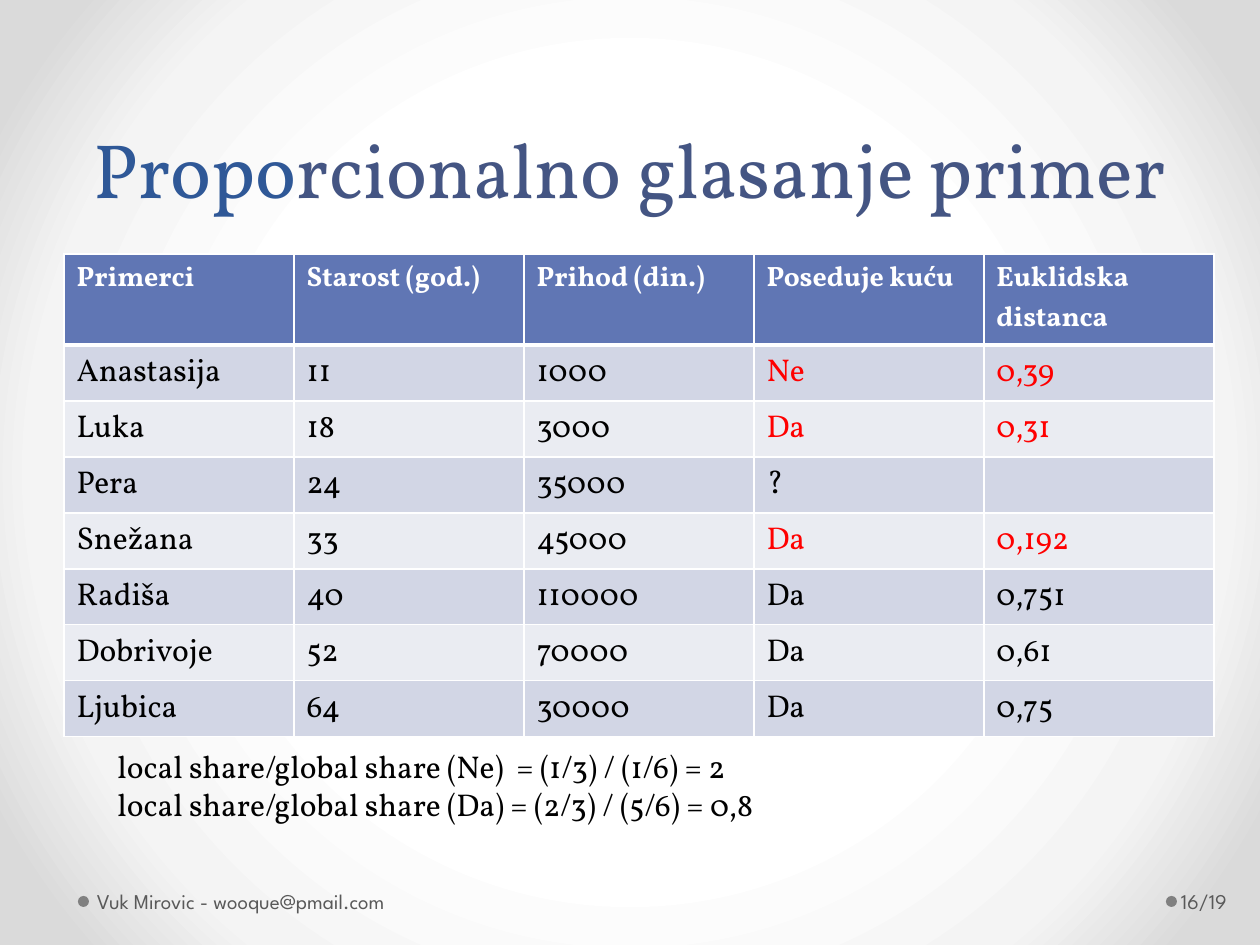
from lxml import etree
from pptx import Presentation
from pptx import util as u
from pptx.dml.color import RGBColor
from pptx.enum import shapes, text
from pptx.oxml import parse_xml
from pptx.oxml.ns import nsdecls, qn

EMU_PER_PX = 914400 / 126
SERIF, SANS = "Vollkorn", "League Spartan"
BLACK, WHITE, RED, GREY = "000000", "FFFFFF", "FF0000", "595959"
HEADER_FILL, BANDS = "6076B4", ("D2D6E5", "EAECF2")

HEADER = ["Primerci", "Starost (god.)", "Prihod (din.)", "Poseduje kuću", "Euklidska distanca"]
PEOPLE = [
    ["Anastasija", "11", "1000", "Ne", "0,39"],
    ["Luka", "18", "3000", "Da", "0,31"],
    ["Pera", "24", "35000", "?", ""],
    ["Snežana", "33", "45000", "Da", "0,192"],
    ["Radiša", "40", "110000", "Da", "0,751"],
    ["Dobrivoje", "52", "70000", "Da", "0,61"],
    ["Ljubica", "64", "30000", "Da", "0,75"],
]
NEIGHBOURS = {"Anastasija", "Luka", "Snežana"}


def px(n):
    return u.Emu(round(n * EMU_PER_PX))


def rgb(value):
    return RGBColor.from_string(value)


class Deck:
    def __init__(self, width, height):
        self.prs = Presentation()
        self.prs.slide_width, self.prs.slide_height = px(width), px(height)
        self.s = self.prs.slides.add_slide(self.prs.slide_layouts[6])

    def radial_background(self, stops):
        fill = self.s.background.fill
        fill.gradient()
        grad = next(self.s.element.iter(qn("a:gradFill")))
        for child in list(grad):
            grad.remove(child)
        stop_list = etree.SubElement(grad, qn("a:gsLst"))
        for percent, color in stops:
            stop = etree.SubElement(stop_list, qn("a:gs"), pos=str(percent * 1000))
            etree.SubElement(stop, qn("a:srgbClr"), val=color)
        circle = etree.SubElement(grad, qn("a:path"), path="circle")
        etree.SubElement(circle, qn("a:fillToRect"), l="50000", t="50000", r="50000", b="50000")

    def run(self, p, words, size, color, font=SERIF, bold=False):
        r = p.add_run()
        r.text = words
        for name, value in {"size": u.Pt(size), "name": font, "bold": bold}.items():
            setattr(r.font, name, value)
        r.font.color.rgb = rgb(color)

    def text(self, box, lines, size, font=SERIF, align=None, spacing=None, **frame):
        """Add a text box; each line is a list of (words, colour) runs."""
        tf = self.s.shapes.add_textbox(*map(px, box)).text_frame
        for name, value in {"word_wrap": True, **frame}.items():
            setattr(tf, name, value)
        for i, line in enumerate(lines):
            p = tf.add_paragraph() if i else tf.paragraphs[0]
            p.alignment, p.line_spacing = align, spacing
            for words, color in line:
                self.run(p, words, size, color, font)

    def dot(self, x, y, size, color):
        sp = self.s.shapes.add_shape(shapes.MSO_SHAPE.OVAL, *map(px, (x, y, size, size)))
        sp.shadow.inherit = False
        sp.fill.solid()
        sp.fill.fore_color.rgb = rgb(color)
        sp.line.fill.background()

    def cell(self, cell, words, fill, borders, **style):
        tc_pr = cell._tc.get_or_add_tcPr()
        for side, points in zip("LRTB", borders):
            tc_pr.append(parse_xml(
                f'<a:ln{side} {nsdecls("a")} w="{u.Pt(points)}"><a:solidFill>'
                f'<a:srgbClr val="{WHITE}"/></a:solidFill></a:ln{side}>'))
        cell.fill.solid()
        cell.fill.fore_color.rgb = rgb(fill)
        if words:
            self.run(cell.text_frame.paragraphs[0], words, **style)

    def table(self, x, y, col_width, header_height, row_height):
        rows, cols = len(PEOPLE) + 1, len(HEADER)
        height = header_height + row_height * len(PEOPLE)
        table = self.s.shapes.add_table(
            rows, cols, *map(px, (x, y, col_width * cols, height))).table
        for column in table.columns:
            column.width = px(col_width)
        for i, row in enumerate(table.rows):
            row.height = px(row_height if i else header_height)
        for c, words in enumerate(HEADER):
            self.cell(table.cell(0, c), words, HEADER_FILL, (1, 1, 1, 3),
                      size=16, color=WHITE, bold=True)
        for i, person in enumerate(PEOPLE):
            top = 1 if i else 3
            for c, words in enumerate(person):
                color = RED if c >= 3 and person[0] in NEIGHBOURS else BLACK
                self.cell(table.cell(i + 1, c), words, BANDS[i % 2], (1, 1, top, 1),
                          size=18, color=color)


def main():
    deck = Deck(1260, 945)
    deck.radial_background([(50, "FFFFFF"), (76, "F4F4F4"), (92, "DADADA")])
    for x in (1166, 78):
        deck.dot(x, 896, 11, "808080")
    deck.text((63, 0, 1134, 220),
              [[("Propo", "2F5897"), ("rcionalno glasanje primer", "445583")]], 44,
              align=text.PP_ALIGN.CENTER, spacing=u.Pt(58),
              vertical_anchor=text.MSO_ANCHOR.BOTTOM)
    footer = {"size": 12, "font": SANS, "vertical_anchor": text.MSO_ANCHOR.MIDDLE}
    deck.text((91, 876, 392, 50), [[("Vuk Mirovic - wooque@pmail.com", GREY)]],
              margin_left=px(6), margin_right=px(13), **footer)
    deck.text((1177, 876, 77, 50), [[("16/19", GREY)]],
              margin_left=px(4), margin_right=px(6), **footer)
    deck.table(64, 254, 230, 91, 56)
    deck.text((105, 741, 973, 89),
              [[("local share/global share (Ne)  = (1/3) / (1/6) = 2", BLACK)],
               [("local share/global share (Da) = (2/3) / (5/6) = 0,8", BLACK)]], 18,
              auto_size=text.MSO_AUTO_SIZE.SHAPE_TO_FIT_TEXT)
    deck.prs.save("out.pptx")


if __name__ == "__main__":
    main()
